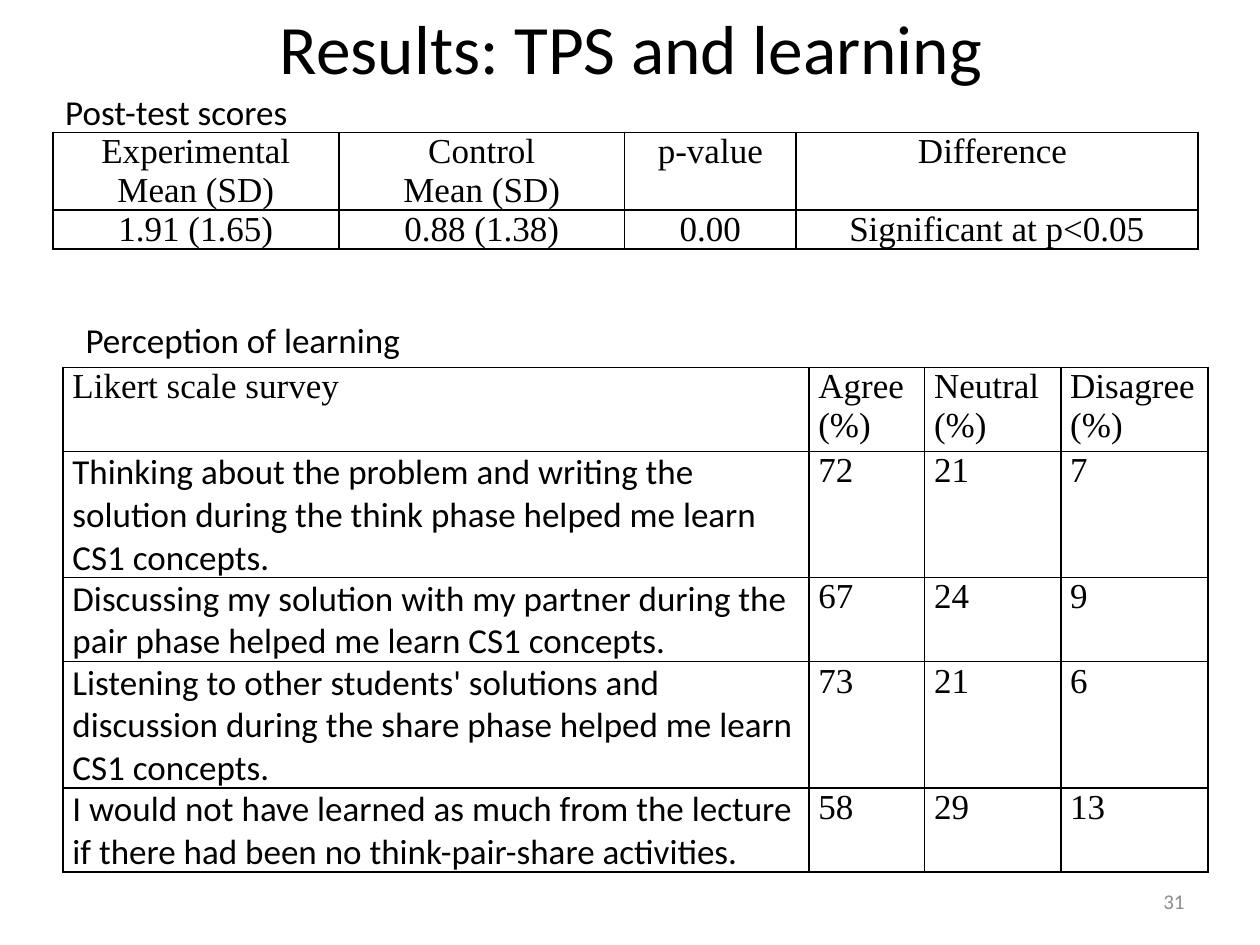
from lxml import etree
from pptx import Presentation
from pptx.dml.color import RGBColor
from pptx.enum.text import MSO_ANCHOR, PP_ALIGN
from pptx.oxml.ns import qn
from pptx.util import Pt

LEFT, CENTER, RIGHT = PP_ALIGN.LEFT, PP_ALIGN.CENTER, PP_ALIGN.RIGHT
MIDDLE = MSO_ANCHOR.MIDDLE
BLACK = RGBColor(0x00, 0x00, 0x00)
GRAY = RGBColor(0x8C, 0x8C, 0x8C)
SANS, SERIF = "Calibri", "Times New Roman"

# Content
TITLE = "Results: TPS and learning"
PAGE_NUMBER = "31"
SCORES_LABEL = "Post-test scores"
SCORES = [
    ["Experimental Mean (SD)", "Control\nMean (SD)", "p-value", "Difference "],
    ["1.91 (1.65)", "0.88 (1.38)", "0.00", "Significant at p<0.05"],
]
SURVEY_LABEL = "Perception of learning"
SURVEY = [
    ["Likert scale survey", "Agree (%)", "Neutral (%)", "Disagree (%)"],
    ["Thinking about the problem and writing the solution during the think "
     "phase helped me learn CS1 concepts.", "72", "21", "7"],
    ["Discussing my solution with my partner during the pair phase helped me "
     "learn CS1 concepts.", "67", "24", "9"],
    ["Listening to other students' solutions and discussion during the share "
     "phase helped me learn CS1 concepts.", "73", "21", "6"],
    ["I would not have learned as much from the lecture if there had been no "
     "think-pair-share activities.", "58", "29", "13"],
]

# Layout in points
SCORES_COLUMNS, SCORES_ROWS = [163.4, 163.4, 97.9, 229.7], [44.5, 22.3]
SURVEY_COLUMNS, SURVEY_ROWS = [426.2, 66.2, 77.8, 84.2], [48, 72, 48, 72, 48]
CELL_MARGIN = 5.4


def write(frame, text, size, font=SANS, color=BLACK, align=LEFT, after=0):
    for index, line in enumerate(text.split("\n")):
        para = frame.paragraphs[0] if index == 0 else frame.add_paragraph()
        para.alignment = align
        if after:
            para.space_after = Pt(after)
        span = para.add_run()
        span.text = line
        span.font.size = Pt(size)
        span.font.name = font
        span.font.color.rgb = color


def add_text(page, text, left, top, width, height, size=20, wrap=False, **style):
    box = page.shapes.add_textbox(Pt(left), Pt(top), Pt(width), Pt(height))
    box.text_frame.word_wrap = wrap
    write(box.text_frame, text, size, **style)
    return box


def add_borders(cell):
    properties = cell._tc.get_or_add_tcPr()
    for index, side in enumerate(("lnL", "lnR", "lnT", "lnB")):
        line = etree.Element(qn(f"a:{side}"), w=str(Pt(1)))
        fill = etree.SubElement(line, qn("a:solidFill"))
        etree.SubElement(fill, qn("a:srgbClr"), val=str(BLACK))
        properties.insert(index, line)


def add_grid(page, rows, left, top, widths, heights, style_of):
    shape = page.shapes.add_table(len(rows), len(widths), Pt(left), Pt(top),
                                  Pt(sum(widths)), Pt(sum(heights)))
    table = shape.table
    table.first_row = table.horz_banding = False
    for column, width in zip(table.columns, widths):
        column.width = Pt(width)
    for r, (values, height) in enumerate(zip(rows, heights)):
        table.rows[r].height = Pt(height)
        for c, value in enumerate(values):
            cell = table.cell(r, c)
            cell.margin_left = cell.margin_right = Pt(CELL_MARGIN)
            cell.margin_top = cell.margin_bottom = 0
            cell.fill.background()
            add_borders(cell)
            write(cell.text_frame, value, 20, **style_of(r, c))


def scores_style(row, column):
    return {"font": SERIF, "align": CENTER, "after": 6 if column >= 2 else 0}


def survey_style(row, column):
    return {"font": SANS if row > 0 and column == 0 else SERIF}


def main():
    deck = Presentation()
    deck.slide_width, deck.slide_height = Pt(720), Pt(540)
    page = deck.slides.add_slide(deck.slide_layouts[5])

    # Title
    title = page.shapes.title
    title.left, title.top, title.width, title.height = Pt(36.7), Pt(0), Pt(648), Pt(54)
    title.text_frame.vertical_anchor = MIDDLE
    write(title.text_frame, TITLE, 39.6, align=CENTER)

    # Post-test scores
    add_grid(page, SCORES, 30.2, 75.6, SCORES_COLUMNS, SCORES_ROWS, scores_style)
    add_text(page, SCORES_LABEL, 30.2, 48.2, 143.3, 31.5)

    # Survey
    add_text(page, SURVEY_LABEL, 41.8, 178.6, 195.8, 31.5)
    add_grid(page, SURVEY, 36, 210, SURVEY_COLUMNS, SURVEY_ROWS, survey_style)

    # Page number
    number = add_text(page, PAGE_NUMBER, 516, 500.5, 168, 28.8, size=12,
                      wrap=True, color=GRAY, align=RIGHT)
    number.text_frame.vertical_anchor = MIDDLE

    deck.save("out.pptx")


if __name__ == "__main__":
    main()
